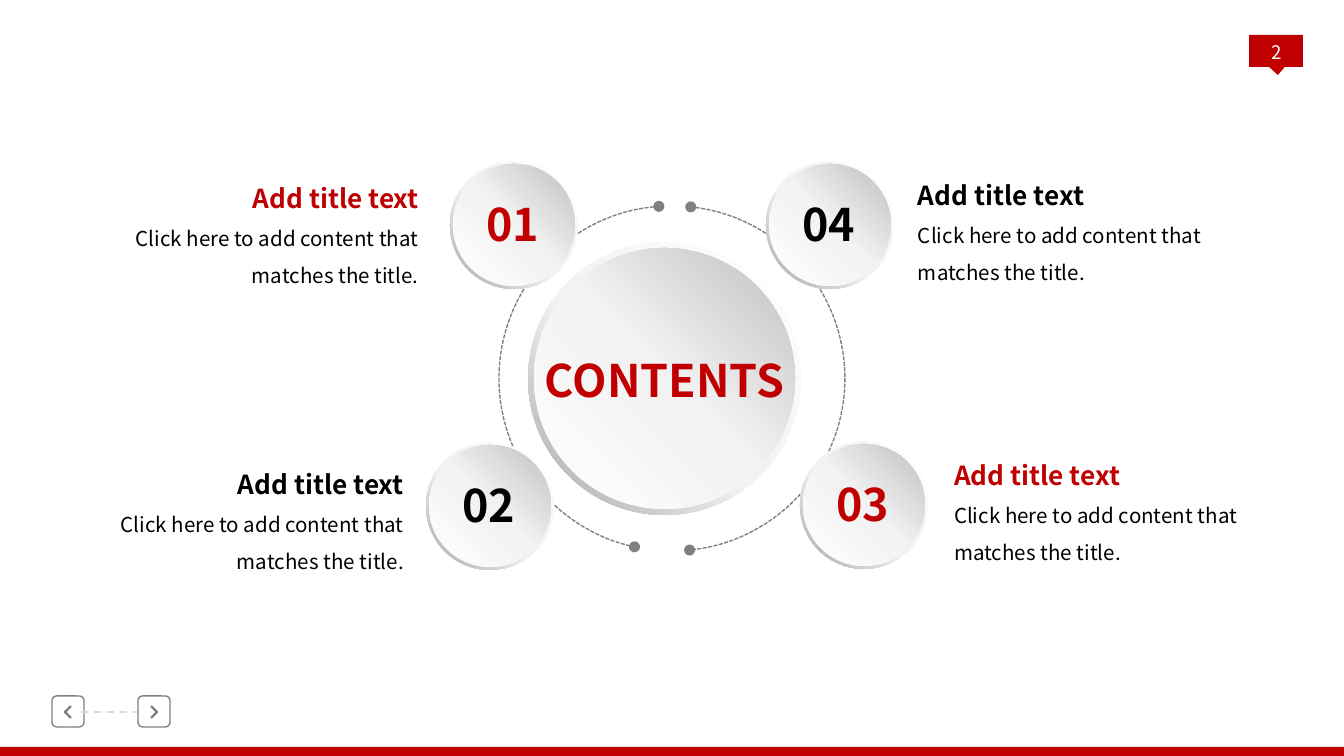
from copy import deepcopy

from lxml.etree import SubElement
from pptx import Presentation
from pptx.dml.color import RGBColor
from pptx.enum.dml import MSO_LINE
from pptx.enum.shapes import MSO_CONNECTOR, MSO_SHAPE
from pptx.enum.text import MSO_ANCHOR, MSO_AUTO_SIZE, PP_ALIGN
from pptx.oxml.ns import qn
from pptx.util import Pt

RED = RGBColor(0xC0, 0x00, 0x00)
BLACK = RGBColor(0x00, 0x00, 0x00)
WHITE = RGBColor(0xFF, 0xFF, 0xFF)
PALE = RGBColor(0xF2, 0xF2, 0xF2)
LIGHT = RGBColor(0xD9, 0xD9, 0xD9)
SILVER = RGBColor(0xBF, 0xBF, 0xBF)
STEEL = RGBColor(0xA6, 0xA6, 0xA6)
GRAY = RGBColor(0x80, 0x80, 0x80)

RING_STOPS = [(0, WHITE), (0.55, PALE), (1, STEEL)]
FACE_STOPS = [(0, WHITE), (0.51, PALE), (1, SILVER)]


class Deck:
    font = "Noto Sans CJK SC"
    scale = 9144000 / 1344

    def __init__(self, width, height):
        self.presentation = Presentation()
        self.presentation.slide_width = self.px(width)
        self.presentation.slide_height = self.px(height)
        self.slide = self.presentation.slides.add_slide(self.presentation.slide_layouts[5])
        self.shapes = self.slide.shapes

    def px(self, length):
        return round(length * self.scale)

    def box(self, *lengths):
        return [self.px(length) for length in lengths]

    def shape(self, preset, at, fill=None):
        shape = self.shapes.add_shape(preset, *self.box(*at))
        shape.shadow.inherit = False
        if fill is None:
            shape.fill.background()
        else:
            shape.fill.solid()
            shape.fill.fore_color.rgb = fill
        shape.line.fill.background()
        return shape

    def stroke(self, shape, color, width, dash=None):
        shape.line.color.rgb = color
        shape.line.width = Pt(width)
        if dash is not None:
            shape.line.dash_style = dash

    def gradient(self, shape, stops, angle):
        shape.fill.gradient()
        shape.fill.gradient_angle = angle
        stop_list = shape.element.find(".//" + qn("a:gsLst"))
        stop_list.insert(1, deepcopy(stop_list[0]))
        for stop, (position, color) in zip(shape.fill.gradient_stops, stops):
            stop.position = position
            stop.color.rgb = color

    def disc(self, left, top, size, rim):
        ring = self.shape(MSO_SHAPE.DONUT, (left, top, size, size))
        ring.adjustments[0] = 0.05
        self.gradient(ring, RING_STOPS, 225)
        face_size = size - 2 * rim
        face = self.shape(MSO_SHAPE.OVAL, (left + rim, top + rim, face_size, face_size))
        self.gradient(face, FACE_STOPS, 45)

    def arc(self, at, start, end, flipped=False):
        arc = self.shape(MSO_SHAPE.ARC, at)
        arc.adjustments[0] = start
        arc.adjustments[1] = end
        self.stroke(arc, GRAY, 0.75, MSO_LINE.SQUARE_DOT)
        outline = arc.element.spPr.find(qn("a:ln"))
        for end_tag in ("a:headEnd", "a:tailEnd"):
            SubElement(outline, qn(end_tag)).set("type", "oval")
        if flipped:
            arc.element.spPr.find(qn("a:xfrm")).set("flipH", "1")

    def frame(self, holder, align_top=True, margins=(0, 0, 0, 0)):
        frame = holder.text_frame
        frame.word_wrap = True
        frame.auto_size = MSO_AUTO_SIZE.NONE
        frame.vertical_anchor = MSO_ANCHOR.TOP if align_top else MSO_ANCHOR.MIDDLE
        (frame.margin_left, frame.margin_top,
         frame.margin_right, frame.margin_bottom) = self.box(*margins)
        return frame

    def run(self, paragraph, text, size, color, bold=False, align=PP_ALIGN.CENTER):
        paragraph.alignment = align
        run = paragraph.add_run()
        run.text = text
        run.font.name = self.font
        run.font.size = Pt(size)
        run.font.bold = bold
        run.font.color.rgb = color

    def title(self, text, at):
        title = self.shapes.title
        title.left, title.top, title.width, title.height = self.box(*at)
        self.shapes.element.append(title.element)
        self.run(self.frame(title).paragraphs[0], text, 24, RED, True)

    def label(self, text, at, size, color, bold=False, **layout):
        holder = self.shapes.add_textbox(*self.box(*at))
        self.run(self.frame(holder, **layout).paragraphs[0], text, size, color, bold)

    def entry(self, heading, body, at, color, align):
        holder = self.shapes.add_textbox(*self.box(*at))
        frame = self.frame(holder, margins=(12, 7, 12, 7))
        self.run(frame.paragraphs[0], heading, 14, color, True, align)
        body_line = frame.add_paragraph()
        body_line.line_spacing = 1.5
        self.run(body_line, body, 11, BLACK, align=align)

    def nav_button(self, left, top, direction):
        button = self.shape(MSO_SHAPE.ROUNDED_RECTANGLE, (left, top, 32, 31))
        button.adjustments[0] = 0.15
        self.stroke(button, GRAY, 0.75)
        center, middle = left + 16, top + 16
        back, tip = center - 3 * direction, center + 3 * direction
        builder = self.shapes.build_freeform(back, middle - 6, scale=self.scale)
        builder.add_line_segments([(tip, middle), (back, middle + 6)], close=False)
        chevron = builder.convert_to_shape()
        chevron.shadow.inherit = False
        chevron.fill.background()
        self.stroke(chevron, GRAY, 1.25)

    def line(self, start, end, color, width, dash):
        line = self.shapes.add_connector(MSO_CONNECTOR.STRAIGHT, *self.box(*start, *end))
        self.stroke(line, color, width, dash)
        SubElement(line.element.spPr, qn("a:effectLst"))


def main():
    deck = Deck(1344, 756)

    deck.shape(MSO_SHAPE.RECTANGLE, (0, 747, 1344, 9), RED)
    deck.shape(MSO_SHAPE.RECTANGLE, (1249, 35, 54, 32), RED)
    pointer = deck.shape(MSO_SHAPE.ISOSCELES_TRIANGLE, (1250, 47, 54, 28), RED)
    pointer.rotation = 176.8
    deck.label("2", (1252, 30, 50, 51), 10, WHITE, align_top=False, margins=(0, 0, 0, 7))

    deck.nav_button(52, 696, -1)
    deck.nav_button(138, 696, 1)
    deck.line((81, 712), (137, 712), LIGHT, 1, MSO_LINE.DASH)

    deck.arc((500, 206, 345, 345), 165.66, 50.57)
    deck.arc((499, 206, 345, 345), 164.51, 46.57, flipped=True)
    deck.disc(528, 242, 273, 6)
    deck.title("CONTENTS", (465, 353, 399, 54))

    entries = [
        ("01", RED, (450, 161), (47, 175), PP_ALIGN.RIGHT),
        ("02", BLACK, (426, 442), (32, 461), PP_ALIGN.RIGHT),
        ("03", RED, (800, 441), (942, 452), PP_ALIGN.LEFT),
        ("04", BLACK, (766, 161), (906, 172), PP_ALIGN.LEFT),
    ]
    for number, color, (left, top), corner, align in entries:
        deck.disc(left, top, 128, 3)
        deck.label(number, (left + 20, top + 36, 86, 54), 24, color, True)
        deck.entry("Add title text", "Click here to add content that matches the title.",
                   (*corner, 384, 144), color, align)

    deck.presentation.save("out.pptx")


if __name__ == "__main__":
    main()
